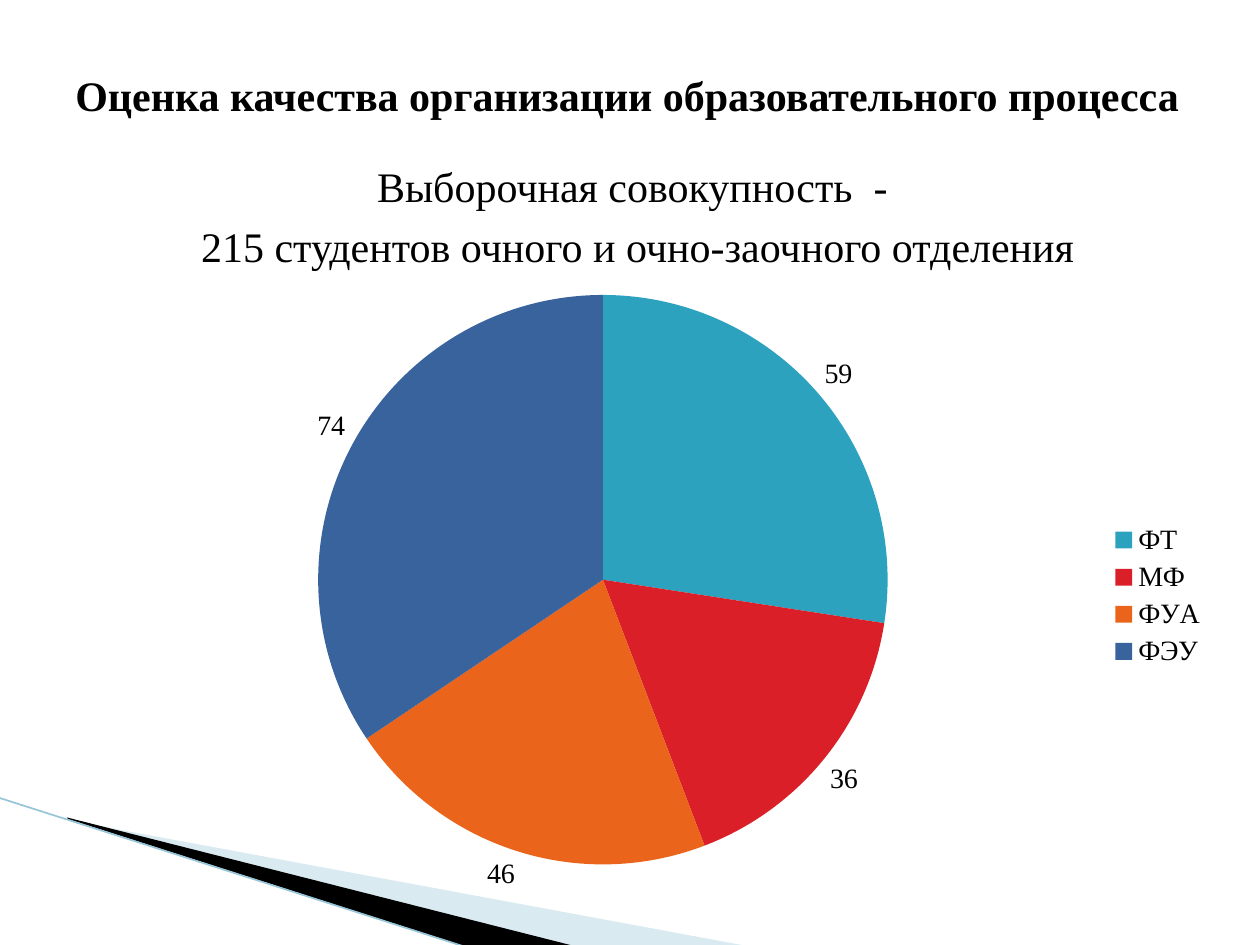
"""Build a slide with a pie chart of surveyed students by faculty."""
from lxml import etree
from pptx import Presentation
from pptx import util as u
from pptx.chart.data import CategoryChartData
from pptx.dml.color import RGBColor
from pptx.enum import chart as ch, shapes, text
from pptx.oxml import parse_xml
from pptx.oxml.ns import nsdecls, qn

FONT = "Times New Roman"
BLACK = RGBColor(0x00, 0x00, 0x00)
PALE = RGBColor(0xA0, 0xCB, 0xDC)
EDGE = RGBColor(0x97, 0xC5, 0xD8)
TEAL = RGBColor(0x2D, 0xA2, 0xBF)
RED = RGBColor(0xDA, 0x1F, 0x28)
ORANGE = RGBColor(0xEB, 0x64, 0x1B)
BLUE = RGBColor(0x39, 0x63, 0x9D)


def style(font, size, bold=False):
    font.name = FONT
    font.size = u.Pt(size)
    font.bold = bold
    font.color.rgb = BLACK


def add_text(top, height, lines, bold=False):
    box = slide.shapes.add_textbox(u.Cm(1.27), u.Cm(top), u.Cm(22.86), u.Cm(height))
    frame = box.text_frame
    frame.word_wrap = True
    frame.text = "\n".join(lines)
    for par in frame.paragraphs:
        for run in par.runs:
            style(run.font, 24, bold)
    return frame


prs = Presentation()
prs.slide_width, prs.slide_height = u.Cm(25.4), u.Cm(19.05)
slide = prs.slides.add_slide(prs.slide_layouts[6])

wedges = [
    (PALE, [(1.4, 16.54), (15.11, 19.08), (11.58, 19.08), (1.4, 16.51)]),
    (BLACK, [(1.35, 16.48), (11.61, 19.08), (9.45, 19.1), (1.37, 16.51)]),
]
for color, points in wedges:
    dots = [(u.Cm(x), u.Cm(y)) for x, y in points]
    path = slide.shapes.build_freeform(*dots[0])
    path.add_line_segments(dots[1:])
    wedge = path.convert_to_shape()
    wedge.shadow.inherit = False
    wedge.fill.solid()
    wedge.fill.fore_color.rgb = color
    wedge.line.fill.background()
    if color == PALE:
        tint = wedge.fill._xPr.find(".//" + qn("a:srgbClr"))
        etree.SubElement(tint, qn("a:alpha")).set("val", "40000")

edge = slide.shapes.add_connector(
    shapes.MSO_CONNECTOR.STRAIGHT, u.Cm(-0.03), u.Cm(16.08), u.Cm(9.42), u.Cm(19.1))
edge.line.color.rgb = EDGE
edge.line.width = u.Pt(0.95)
etree.SubElement(edge._element.spPr, qn("a:effectLst"))

body = add_text(3.12, 2.4, ["Выборочная совокупность  - ",
                            "215 студентов очного и очно-заочного отделения"])
for par in body.paragraphs:
    par.alignment = text.PP_ALIGN.CENTER
    props = par._p.get_or_add_pPr()
    props.set("marL", str(u.Cm(1.02)))
    props.set("indent", str(u.Cm(-0.71)))
body.paragraphs[1].space_before = u.Pt(5.5)

title = add_text(0.8, 2.2, ["Оценка качества организации образовательного процесса"], True)
title.vertical_anchor = text.MSO_ANCHOR.MIDDLE

data = CategoryChartData()
data.categories = ["ФТ", "МФ", "ФУА", "ФЭУ"]
data.add_series("Series 1", [59, 36, 46, 74])
pie = slide.shapes.add_chart(ch.XL_CHART_TYPE.PIE, u.Cm(1.57), u.Cm(5.56),
                             u.Cm(23.01), u.Cm(12.9), data).chart
style(pie.font, 16)
pie.has_title = False
pie.has_legend = True
pie.legend.position = ch.XL_LEGEND_POSITION.RIGHT
pie.legend.include_in_layout = False
style(pie.legend.font, 16)

plot = pie.plots[0]
plot.vary_by_categories = True
plot.has_data_labels = True
marks = plot.data_labels
marks.show_value = True
marks.show_percentage = False
marks.position = ch.XL_LABEL_POSITION.OUTSIDE_END
style(marks.font, 16)
for i, color in enumerate([TEAL, RED, ORANGE, BLUE]):
    slice_ = plot.series[0].points[i].format
    slice_.fill.solid()
    slice_.fill.fore_color.rgb = color
    slice_.line.fill.background()

area = pie._chartSpace.chart.plotArea
for old in area.findall(qn("c:layout")):
    area.remove(old)
area.insert(0, parse_xml(
    f'<c:layout {nsdecls("c")}><c:manualLayout><c:layoutTarget val="inner"/>'
    '<c:xMode val="edge"/><c:yMode val="edge"/><c:x val="0.21"/><c:y val="0.03"/>'
    '<c:w val="0.5"/><c:h val="0.89"/></c:manualLayout></c:layout>'))

prs.save("out.pptx")
